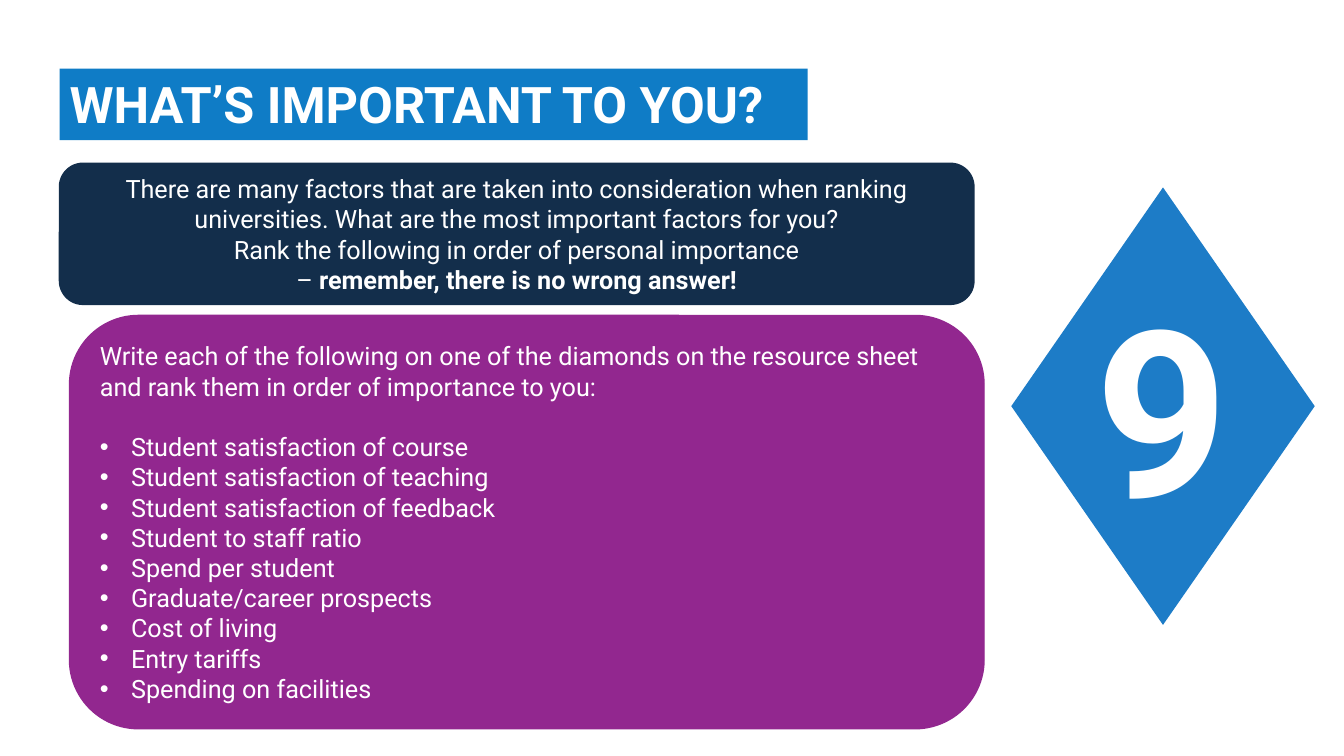
from dataclasses import dataclass

from lxml import etree
from pptx import Presentation
from pptx import util as u
from pptx.dml.color import RGBColor
from pptx.enum import shapes, text
from pptx.oxml import ns

EMU_PER_PX = 9144  # 100 px to the inch


@dataclass(frozen=True)
class Theme:
    font: str = "Roboto"
    white: str = "FFFFFF"
    title_blue: str = "0F7CC6"
    diamond_blue: str = "1D7CC7"
    navy: str = "132E4B"
    purple: str = "92278F"
    title_size: int = 36
    body_size: int = 18
    numeral_size: int = 166


THEME = Theme()

FACTORS = [
    "Student satisfaction of course",
    "Student satisfaction of teaching",
    "Student satisfaction of feedback",
    "Student to staff ratio",
    "Spend per student",
    "Graduate/career prospects",
    "Cost of living",
    "Entry tariffs",
    "Spending on facilities",
]


def px(length):
    return u.Emu(length * EMU_PER_PX)


def place(part, left, top, width, height):
    part.left, part.top = px(left), px(top)
    part.width, part.height = px(width), px(height)


def paint(part, color):
    part.fill.solid()
    part.fill.fore_color.rgb = RGBColor.from_string(color)


def set_font(font, size, bold=False):
    font.name = THEME.font
    font.size = u.Pt(size)
    font.bold = bold
    font.color.rgb = RGBColor.from_string(THEME.white)


def style_paragraph(paragraph, size, bold=False, align=text.PP_ALIGN.LEFT):
    paragraph.alignment = align
    paragraph.space_before = u.Pt(0)
    for run in paragraph.runs:
        set_font(run.font, size, bold)


def set_frame(frame, anchor):
    frame.word_wrap = True
    frame.auto_size = text.MSO_AUTO_SIZE.NONE
    frame.vertical_anchor = anchor


def set_bullet(paragraph, char=None, indent=0):
    properties = paragraph._p.get_or_add_pPr()
    properties.set("marL", str(px(indent)))
    properties.set("indent", str(-px(indent)))
    if char:
        etree.SubElement(properties, ns.qn("a:buFont"), typeface="Arial")
        etree.SubElement(properties, ns.qn("a:buChar"), char=char)
    else:
        etree.SubElement(properties, ns.qn("a:buNone"))


def add_panel(slide, kind, box, color, outlined=False):
    panel = slide.shapes.add_shape(kind, *map(px, box))
    panel.shadow.inherit = False
    paint(panel, color)
    if outlined:
        paint(panel.line, color)
        panel.line.width = u.Pt(1)
    else:
        panel.line.fill.background()
    return panel


def fill_title(title):
    place(title, 59, 68, 742, 71)
    paint(title, THEME.title_blue)
    set_frame(title.text_frame, text.MSO_ANCHOR.TOP)
    title.text_frame.text = "WHAT’S IMPORTANT TO YOU?"
    style_paragraph(title.text_frame.paragraphs[0], THEME.title_size, bold=True)


def add_numeral(slide):
    numeral = slide.shapes.add_textbox(*map(px, (1077, 258, 152, 289)))
    set_frame(numeral.text_frame, text.MSO_ANCHOR.TOP)
    numeral.text_frame.text = "9"
    style_paragraph(numeral.text_frame.paragraphs[0], THEME.numeral_size, bold=True)


def fill_introduction(frame):
    set_frame(frame, text.MSO_ANCHOR.MIDDLE)
    question = frame.paragraphs[0]
    question.text = (
        "There are many factors that are taken into consideration when ranking "
        "universities. What are the most important factors for you?\n"
        "Rank the following in order of personal importance"
    )
    reminder = frame.add_paragraph()
    reminder.text = "– "
    reminder.add_run().text = "remember, there is no wrong answer!"
    for paragraph in (question, reminder):
        style_paragraph(paragraph, THEME.body_size, align=text.PP_ALIGN.CENTER)
    reminder.runs[1].font.bold = True


def fill_factors(body):
    place(body, 89, 323, 867, 390)
    frame = body.text_frame
    set_frame(frame, text.MSO_ANCHOR.MIDDLE)
    instruction = frame.paragraphs[0]
    instruction.text = (
        "Write each of the following on one of the diamonds on the resource sheet "
        "and rank them in order of importance to you:"
    )
    set_bullet(instruction)
    style_paragraph(instruction, THEME.body_size)
    for position, factor in enumerate(FACTORS):
        entry = frame.add_paragraph()
        entry.text = factor
        set_bullet(entry, "•", indent=31)
        style_paragraph(entry, THEME.body_size)
        if position == 0:
            entry.space_before = u.Pt(21.5)


def main():
    deck = Presentation()
    deck.slide_width, deck.slide_height = px(1333), px(750)
    slide = deck.slides.add_slide(deck.slide_layouts[1])
    title, body = slide.placeholders

    # Heading
    fill_title(title)

    # Diamond with the number of factors
    add_panel(slide, shapes.MSO_SHAPE.DIAMOND, (1003, 186, 301, 434), THEME.diamond_blue)
    add_numeral(slide)

    # Introduction and task panels
    rounded = shapes.MSO_SHAPE.ROUNDED_RECTANGLE
    introduction = add_panel(slide, rounded, (59, 162, 907, 140), THEME.navy, outlined=True)
    fill_introduction(introduction.text_frame)
    add_panel(slide, rounded, (69, 313, 907, 410), THEME.purple, outlined=True)

    # Factor list, brought in front of its panel
    fill_factors(body)
    slide.shapes.element.append(body.element)

    deck.save("out.pptx")


if __name__ == "__main__":
    main()
